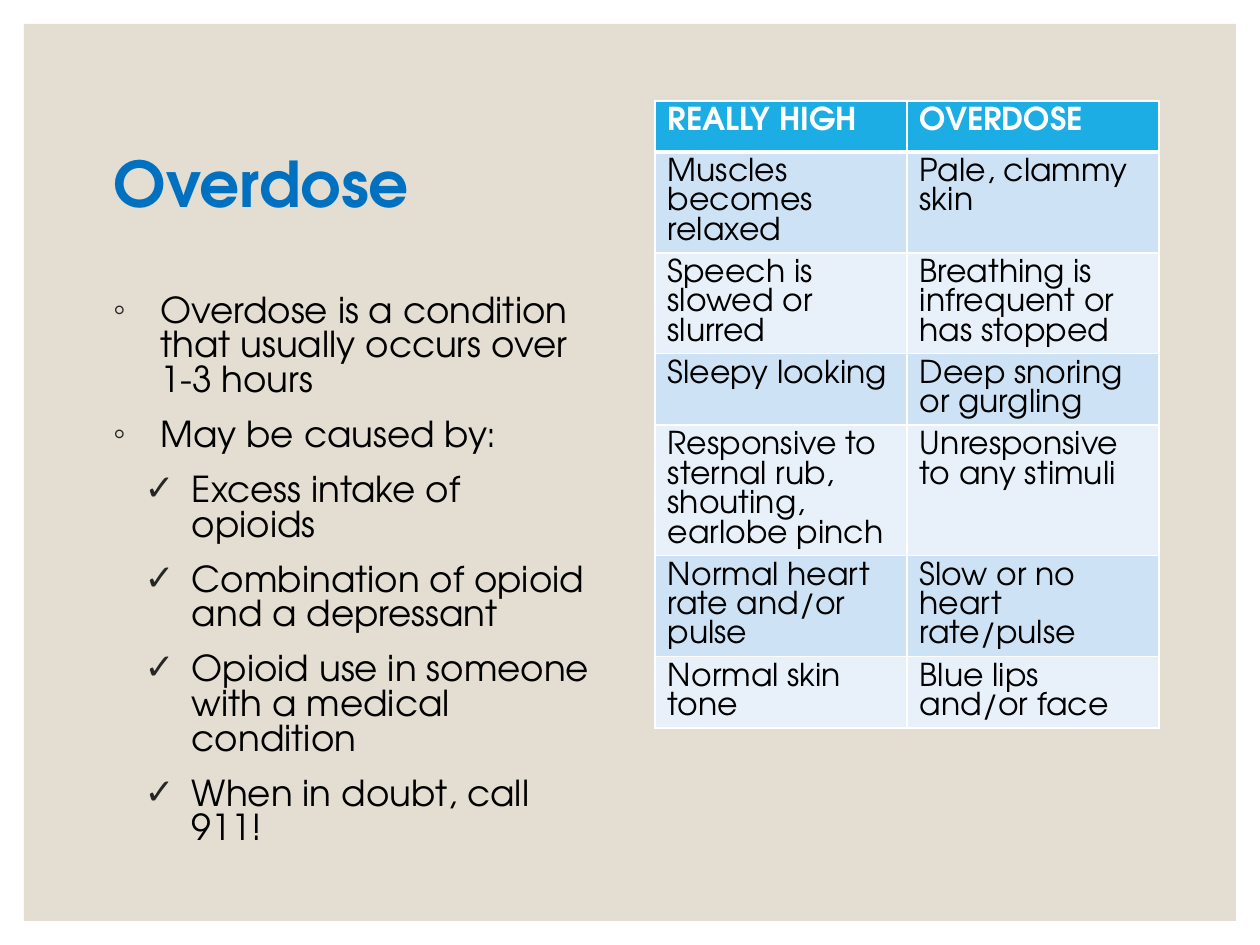
from lxml.etree import SubElement
from pptx import Presentation
from pptx.dml.color import RGBColor
from pptx.enum.shapes import MSO_SHAPE as Shape
from pptx.enum.text import MSO_ANCHOR as Anchor, MSO_AUTO_SIZE as AutoSize, PP_ALIGN as Align
from pptx.oxml.ns import qn
from pptx.util import Pt

# Content
TITLE = "Overdose"
POINTS = [
    (0, "Overdose is a condition that usually occurs over 1-3 hours"),
    (0, "May be caused by:"),
    (1, "Excess intake of opioids"),
    (1, "Combination of opioid and a depressant"),
    (1, "Opioid use in someone with a medical condition"),
    (1, "When in doubt, call 911!"),
]
SIGNS = [
    ("REALLY HIGH", "OVERDOSE"),
    ("Muscles becomes relaxed", "Pale, clammy skin"),
    ("Speech is slowed or slurred", "Breathing is infrequent or has stopped"),
    ("Sleepy looking", "Deep snoring or gurgling"),
    ("Responsive to sternal rub, shouting, earlobe pinch", "Unresponsive to any stimuli"),
    ("Normal heart rate and/or pulse", "Slow or no heart rate/pulse"),
    ("Normal skin tone", "Blue lips and/or face"),
]

# Style
FONT = "TeX Gyre Adventor"
LEVELS = [(27, "◦"), (45, "✓")]  # left margin, bullet
HANGING = 27
HEADER_FILL, BANDS = "1CADE4", ("CDE3F5", "E8F1FA")
WIDTH, HEIGHT, FRAME = 720, 540, 13.7
COLUMN_WIDTH, ROW_HEIGHT = 144, 29.2


def color(hex_code):
    return RGBColor.from_string(hex_code)


def style(paragraph, size, hex_code, bold=False, spacing=None):
    paragraph.alignment = Align.LEFT
    paragraph.line_spacing = spacing
    for run in paragraph.runs:
        run.font.name = FONT
        run.font.size = Pt(size)
        run.font.bold = bold
        run.font.color.rgb = color(hex_code)


def add_bullet(paragraph, level):
    margin, mark = LEVELS[level]
    props = paragraph._p.get_or_add_pPr()
    props.set("marL", str(Pt(margin)))
    props.set("indent", str(Pt(-HANGING)))
    tint = SubElement(props, qn("a:buClr"))
    SubElement(tint, qn("a:srgbClr"), val="262626")
    SubElement(props, qn("a:buFont"), typeface="Arial")
    SubElement(props, qn("a:buChar"), char=mark)


def set_borders(cell, widths):
    props = cell._tc.get_or_add_tcPr()
    for position, (side, width) in enumerate(widths.items()):
        line = props.makeelement(qn(f"a:{side}"), {"w": str(Pt(width))})
        fill = SubElement(line, qn("a:solidFill"))
        SubElement(fill, qn("a:srgbClr"), val="FFFFFF")
        props.insert(position, line)


deck = Presentation()
deck.slide_width, deck.slide_height = Pt(WIDTH), Pt(HEIGHT)
slide = deck.slides.add_slide(deck.slide_layouts[5])
shapes = slide.shapes

# Background panel, behind the title
panel = shapes.add_shape(Shape.RECTANGLE, Pt(FRAME), Pt(FRAME),
                         Pt(WIDTH - 2 * FRAME), Pt(HEIGHT - 2 * FRAME))
panel.fill.solid()
panel.fill.fore_color.rgb = color("E3DED1")
panel.line.fill.background()
panel.shadow.inherit = False
shapes._spTree.insert(2, panel._element)

# Title
title = shapes.title
title.left, title.top, title.width, title.height = Pt(57.6), Pt(50.4), Pt(604.8), Pt(108)
title.text_frame.text = TITLE
title.text_frame.vertical_anchor = Anchor.MIDDLE
title.text_frame.auto_size = AutoSize.NONE
style(title.text_frame.paragraphs[0], 36, "0070C0", bold=True)

# Bulleted points
points = shapes.add_textbox(Pt(57.6), Pt(165.6), Pt(288), Pt(309.6)).text_frame
points.word_wrap = True
for index, (level, text) in enumerate(POINTS):
    point = points.add_paragraph() if index else points.paragraphs[0]
    point.text = text
    point.level = level
    style(point, 20.4, "000000", spacing=Pt(19.75))
    point.space_before = Pt(11.7 if index else 0)
    add_bullet(point, level)

# Comparison table
rows, columns = len(SIGNS), len(SIGNS[0])
signs = shapes.add_table(rows, columns, Pt(374.4), Pt(57.6),
                         Pt(columns * COLUMN_WIDTH), Pt(rows * ROW_HEIGHT)).table
for column in signs.columns:
    column.width = Pt(COLUMN_WIDTH)
for r, texts in enumerate(SIGNS):
    signs.rows[r].height = Pt(ROW_HEIGHT)
    header = r == 0
    for c, text in enumerate(texts):
        cell = signs.cell(r, c)
        cell.text = text
        cell.fill.solid()
        cell.fill.fore_color.rgb = color(HEADER_FILL if header else BANDS[(r - 1) % 2])
        style(cell.text_frame.paragraphs[0], 18, "FFFFFF" if header else "000000",
              bold=header, spacing=Pt(16.8))
        set_borders(cell, {"lnL": 1, "lnR": 1, "lnT": 3 if r == 1 else 1,
                           "lnB": 3 if header else 1})

deck.save("out.pptx")
